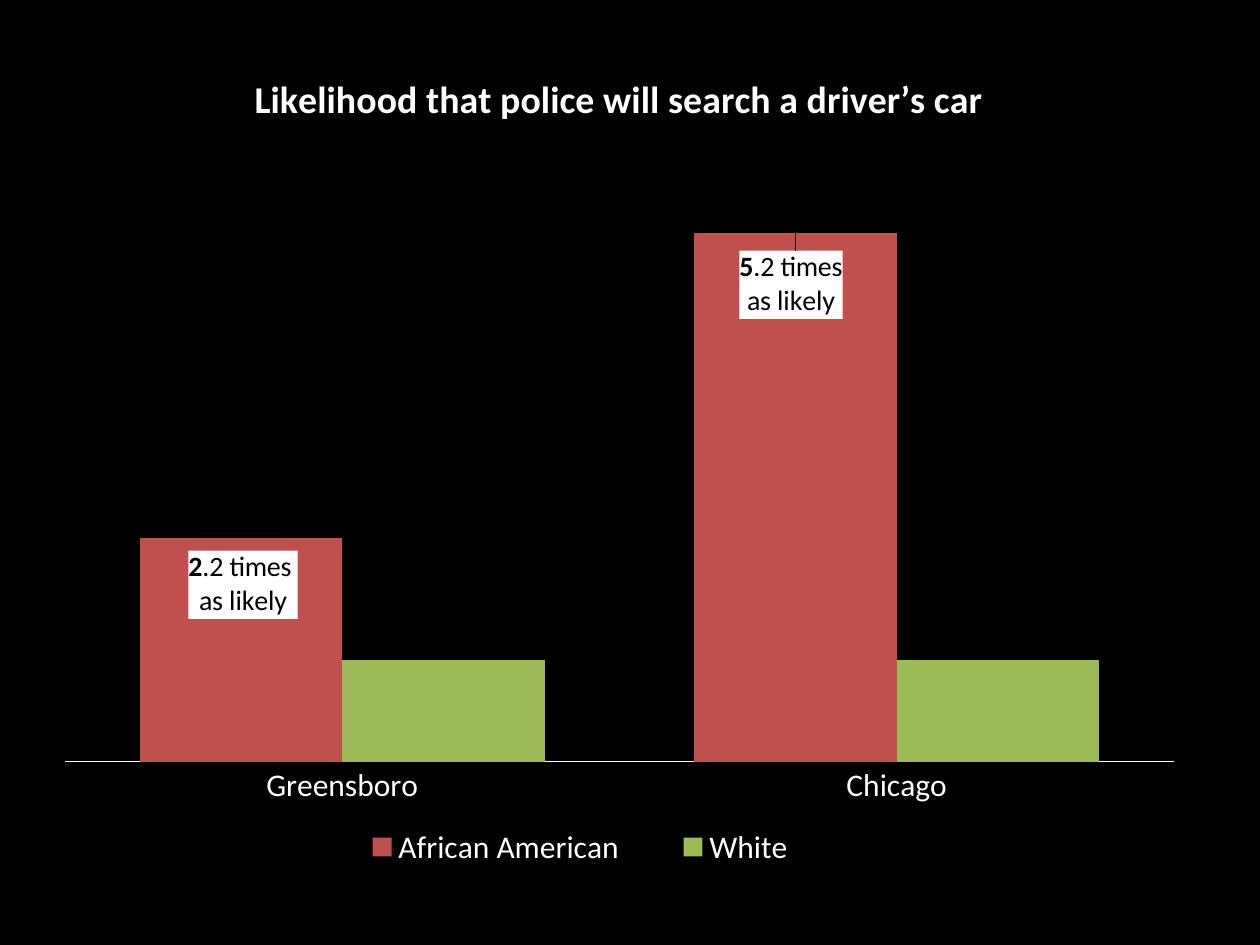
from lxml.etree import SubElement
from pptx import Presentation
from pptx.chart.data import CategoryChartData
from pptx.dml.color import RGBColor
from pptx.enum.chart import XL_CHART_TYPE, XL_LABEL_POSITION, XL_LEGEND_POSITION, XL_TICK_MARK
from pptx.oxml import parse_xml
from pptx.oxml.ns import nsdecls, qn
from pptx.util import Pt

TITLE = "Likelihood that police will search a driver’s car"
CITIES = ["Greensboro", "Chicago"]
SERIES = [("African American", [2.2, 5.2], "C0504D"), ("White", [1, 1], "9BBB59")]
# Each label: bold start, rest of the first line, second line, shift from its default place
LABELS = [
    ("2", ".2 times ", "as likely", {"x": 1.1, "y": 4.3}),
    ("5", ".2 times", "as likely", {"x": -2.6, "y": 7.1}),
]
# Points, measured inside the chart area
CHART_SIZE = {"x": 660, "y": 480, "w": 660, "h": 480}
TITLE_PLACE = {"x": 117.6, "y": 13.5}
PLOT_PLACE = {"x": 13.2, "y": 62.8, "w": 633.6, "h": 348.6}
LEGEND_PLACE = {"x": 158, "y": 441, "w": 299, "h": 38}


def color(value):
    return RGBColor.from_string(value)


def style_font(font, size, value, bold=False):
    font.name = "Calibri"
    font.size = Pt(size)
    font.bold = bold
    font.color.rgb = color(value)


def place(part, spot, after, inner=False, shift=False):
    """Give a chart part a manual layout, put after the named child or first."""
    for old in part.findall(qn("c:layout")):
        part.remove(old)
    layout = parse_xml(f"<c:layout {nsdecls('c')}/>")
    manual = SubElement(layout, qn("c:manualLayout"))
    if inner:
        SubElement(manual, qn("c:layoutTarget")).set("val", "inner")
    if not shift:
        for axis in "xy":
            SubElement(manual, qn(f"c:{axis}Mode")).set("val", "edge")
    for key, value in spot.items():
        SubElement(manual, qn(f"c:{key}")).set("val", str(value / CHART_SIZE[key]))
    if after is None:
        part.insert(0, layout)
    else:
        part.find(qn(after)).addnext(layout)


def label_point(point, label):
    start, rest, second_line, offset = label
    data_label = point.data_label
    frame = data_label.text_frame
    first, second = frame.paragraphs[0], frame.add_paragraph()
    for para, text, bold in ((first, start, True), (first, rest, False), (second, second_line, False)):
        span = para.add_run()
        span.text = text
        style_font(span.font, 16, "000000", bold)
    data_label.position = XL_LABEL_POSITION.INSIDE_END
    fill = parse_xml(
        f'<c:spPr {nsdecls("c", "a")}><a:solidFill><a:srgbClr val="FFFFFF"/></a:solidFill></c:spPr>')
    rich_holder = frame._txBody.getparent()
    rich_holder.addnext(fill)
    place(rich_holder.getparent(), offset, after="c:idx", shift=True)


deck = Presentation()
deck.slide_width, deck.slide_height = Pt(720), Pt(540)
page = deck.slides.add_slide(deck.slide_layouts[6])
page.background.fill.solid()
page.background.fill.fore_color.rgb = color("000000")

data = CategoryChartData()
data.categories = CITIES
for name, values, _ in SERIES:
    data.add_series(name, values)
chart = page.shapes.add_chart(
    XL_CHART_TYPE.COLUMN_CLUSTERED, Pt(24), Pt(24),
    Pt(CHART_SIZE["w"]), Pt(CHART_SIZE["h"]), data).chart
style_font(chart.font, 18, "FFFFFF")

title = chart.chart_title
span = title.text_frame.paragraphs[0].add_run()
span.text = TITLE
style_font(span.font, 21.6, "FFFFFF", True)
place(title._element, TITLE_PLACE, after="c:tx")

plot = chart.plots[0]
plot.gap_width, plot.overlap, plot.vary_by_categories = 74, 0, False
place(chart._chartSpace.chart.plotArea, PLOT_PLACE, after=None, inner=True)
for series, (_, _, value) in zip(plot.series, SERIES):
    series.format.fill.solid()
    series.format.fill.fore_color.rgb = color(value)

labelled = plot.series[0]
labelled.data_labels.show_value = True
style_font(labelled.data_labels.font, 16, "000000", True)
for index, label in enumerate(LABELS):
    label_point(labelled.points[index], label)

category_axis = chart.category_axis
category_axis.major_tick_mark = XL_TICK_MARK.NONE
category_axis.format.line.color.rgb = color("FFFFFF")
category_axis.format.line.width = Pt(0.75)
value_axis = chart.value_axis
value_axis.visible = False
value_axis.has_major_gridlines = False
value_axis.minimum_scale, value_axis.maximum_scale = 0, 6

chart.has_legend = True
legend = chart.legend
legend.position = XL_LEGEND_POSITION.BOTTOM
legend.include_in_layout = False
style_font(legend.font, 18, "FFFFFF")
place(legend._element, LEGEND_PLACE, after="c:legendPos")

deck.save("out.pptx")
